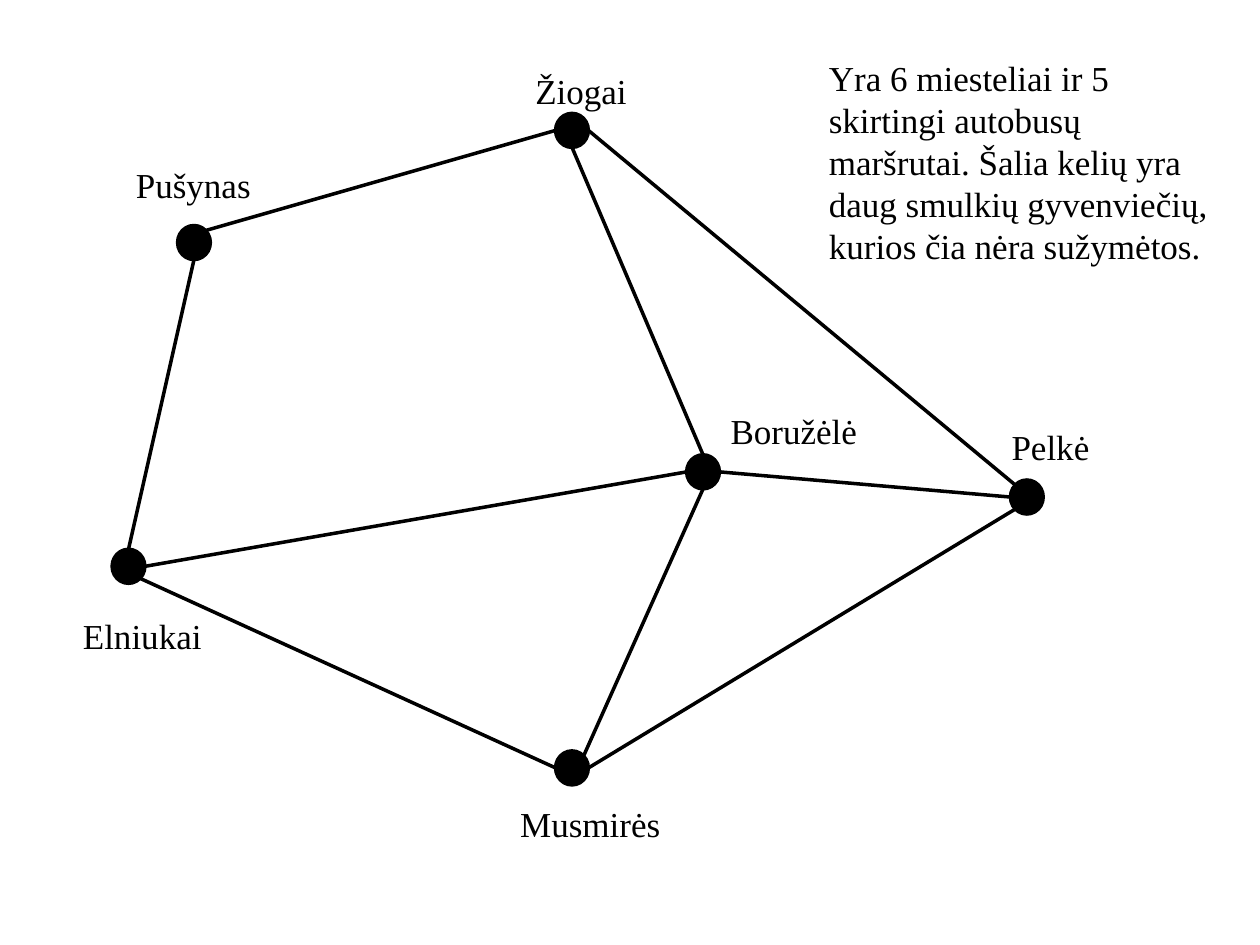
"""Build a slide with a map of six towns and the roads between them."""
from dataclasses import dataclass
from math import sqrt

from lxml.etree import SubElement
from pptx import Presentation
from pptx.dml.color import RGBColor
from pptx.enum.shapes import MSO_CONNECTOR as Connector, MSO_SHAPE as Shape
from pptx.enum.text import MSO_AUTO_SIZE as AutoSize
from pptx.oxml.ns import qn
from pptx.util import Inches, Pt


@dataclass(frozen=True)
class Theme:
    ink: RGBColor = RGBColor(0, 0, 0)
    font: str = "Times New Roman"
    text_size: Pt = Pt(20)
    line_width: Pt = Pt(2)


THEME = Theme()
DOT_WIDTH, DOT_HEIGHT = 0.26, 0.27
LABEL_WIDTH, LABEL_HEIGHT = 1.56, 0.42

TOWNS = {
    "Pušynas": {"dot": (1.41, 1.79), "label": (0.98, 1.25)},
    "Žiogai": {"dot": (4.41, 0.9), "label": (4.15, 0.5)},
    "Boružėlė": {"dot": (5.45, 3.61), "label": (5.7, 3.2)},
    "Elniukai": {"dot": (0.89, 4.36), "label": (0.56, 4.83)},
    "Musmirės": {"dot": (4.41, 5.96), "label": (4.03, 6.32)},
    "Pelkė": {"dot": (8.02, 3.81), "label": (7.93, 3.33)},
}
ROADS = [
    ("Elniukai", "top", "Pušynas", "bottom"),
    ("Pušynas", "top right", "Žiogai", "left"),
    ("Elniukai", "right", "Boružėlė", "left"),
    ("Boružėlė", "top", "Žiogai", "bottom"),
    ("Elniukai", "bottom right", "Musmirės", "left"),
    ("Žiogai", "right", "Pelkė", "top left"),
    ("Musmirės", "right", "Pelkė", "bottom left"),
    ("Musmirės", "top right", "Boružėlė", "bottom"),
    ("Boružėlė", "right", "Pelkė", "left"),
]
DESCRIPTION = (
    "Yra 6 miesteliai ir 5 skirtingi autobusų maršrutai. Šalia kelių yra "
    "daug smulkių gyvenviečių, kurios čia nėra sužymėtos."
)
DIRECTIONS = {"left": (-1, 0), "right": (1, 0), "top": (0, -1), "bottom": (0, 1)}


def rim_point(town, side):
    words = side.split()
    horizontal, vertical = (sum(axis) for axis in zip(*(DIRECTIONS[word] for word in words)))
    reach = 0.5 / sqrt(len(words))
    left, top = TOWNS[town]["dot"]
    return (
        Inches(left + DOT_WIDTH * (0.5 + horizontal * reach)),
        Inches(top + DOT_HEIGHT * (0.5 + vertical * reach)),
    )


def style_line(line):
    line.color.rgb = THEME.ink
    line.width = THEME.line_width


def add_dot(shapes, left, top):
    dot = shapes.add_shape(
        Shape.OVAL, Inches(left), Inches(top), Inches(DOT_WIDTH), Inches(DOT_HEIGHT)
    )
    dot.shadow.inherit = False
    dot.fill.solid()
    dot.fill.fore_color.rgb = THEME.ink
    style_line(dot.line)


def add_road(shapes, start_town, start_side, end_town, end_side):
    road = shapes.add_connector(
        Connector.STRAIGHT, *rim_point(start_town, start_side), *rim_point(end_town, end_side)
    )
    style_line(road.line)
    SubElement(road._element.spPr, qn("a:effectLst"))


def add_text(shapes, text, left, top, width, height):
    box = shapes.add_textbox(Inches(left), Inches(top), Inches(width), Inches(height))
    frame = box.text_frame
    frame.word_wrap = True
    frame.auto_size = AutoSize.SHAPE_TO_FIT_TEXT
    run = frame.paragraphs[0].add_run()
    run.text = text
    run.font.name = THEME.font
    run.font.size = THEME.text_size
    run.font.color.rgb = THEME.ink


def main():
    presentation = Presentation()
    presentation.slide_width, presentation.slide_height = Inches(10), Inches(7.5)
    slide = presentation.slides.add_slide(presentation.slide_layouts[6])
    town_map = slide.shapes.add_group_shape().shapes
    for town in TOWNS.values():
        add_dot(town_map, *town["dot"])
    for road in ROADS:
        add_road(town_map, *road)
    for name, town in TOWNS.items():
        add_text(town_map, name, *town["label"], LABEL_WIDTH, LABEL_HEIGHT)
    add_text(slide.shapes, DESCRIPTION, 6.48, 0.4, 3.27, 1.78)
    presentation.save("out.pptx")


if __name__ == "__main__":
    main()
